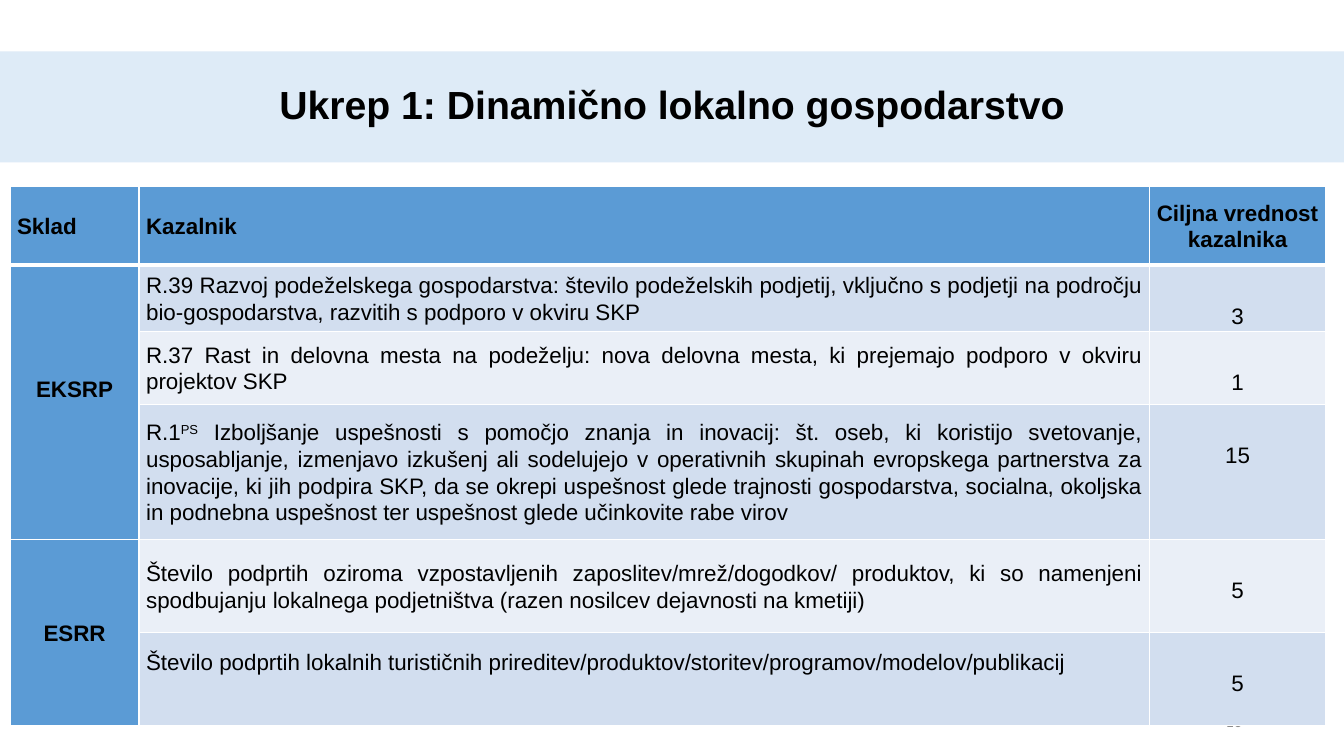
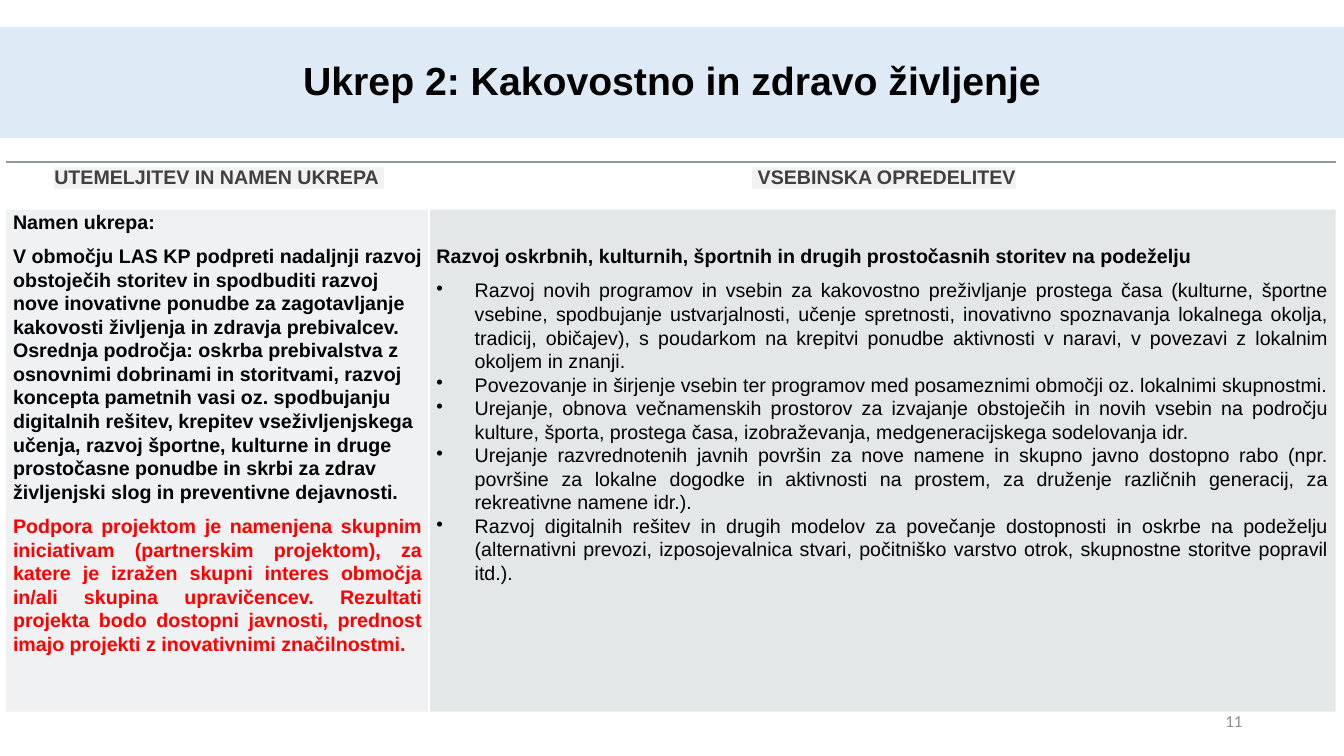
from dataclasses import dataclass

import pptx
import pptx.dml.color
import pptx.enum.text
import pptx.oxml.ns
import pptx.util
from lxml import etree

RGB = pptx.dml.color.RGBColor
ALIGN = pptx.enum.text.PP_ALIGN
ANCHOR = pptx.enum.text.MSO_ANCHOR
Inches = pptx.util.Inches
Pt = pptx.util.Pt
qn = pptx.oxml.ns.qn

BLACK = RGB(0x00, 0x00, 0x00)
WHITE = RGB(0xFF, 0xFF, 0xFF)
RED = RGB(0xFF, 0x00, 0x00)
DARK_GREY = RGB(0x40, 0x40, 0x40)
NUMBER_GREY = RGB(0x8C, 0x8C, 0x8C)
RULE_GREY = RGB(0x8F, 0x9A, 0x9D)
PANEL_GREY = RGB(0xB4, 0xBC, 0xBE)
HIGHLIGHT = RGB(0xF2, 0xF2, 0xF2)
BAND_BLUE = RGB(0xDE, 0xEB, 0xF7)
HEAD_BLUE = RGB(0x5B, 0x9B, 0xD5)
ROW_DARK = RGB(0xD2, 0xDE, 0xEF)
ROW_LIGHT = RGB(0xEA, 0xEF, 0xF7)

NO_STYLE = "{2D5ABB26-0587-4C30-8999-92F81FD0307C}"
BULLET_INDENT = Inches(0.38)


@dataclass
class Para:
    """A paragraph; text between two ^ marks is superscript."""
    text: str
    size: int = 14
    bold: bool = False
    color: RGB = BLACK
    align: ALIGN = ALIGN.LEFT
    spacing: float = 1.07
    after: int = 8
    font: str = "Arial"
    bullet: bool = False
    highlight: RGB = None


def add_color(parent, color, alpha=100):
    clr = etree.SubElement(parent, qn("a:srgbClr"), val=str(color))
    if alpha < 100:
        etree.SubElement(clr, qn("a:alpha"), val=str(alpha * 1000))


class Deck:
    """Holds the style and the current slide; lengths are percent of the slide."""

    def __init__(self):
        self.prs = pptx.Presentation()
        self.prs.slide_width = Inches(13.33)
        self.prs.slide_height = Inches(7.5)
        self.slide = None

    def x(self, percent):
        return round(self.prs.slide_width * percent / 100)

    def y(self, percent):
        return round(self.prs.slide_height * percent / 100)

    def add_text(self, tf, paras):
        for i, para in enumerate(paras):
            p = tf.add_paragraph() if i else tf.paragraphs[0]
            p.alignment = para.align
            p.line_spacing = para.spacing
            p.space_before = Pt(0)
            p.space_after = Pt(para.after)
            p.font.size = Pt(para.size)
            p.font.bold = para.bold
            p.font.name = para.font
            p.font.color.rgb = para.color
            for j, part in enumerate(para.text.split("^")):
                r = p.add_run()
                r.text = part
                rPr = r._r.get_or_add_rPr()
                if j % 2:
                    rPr.set("baseline", "30000")
                if para.highlight:
                    add_color(etree.SubElement(rPr, qn("a:highlight")), para.highlight)
            if para.bullet:
                pPr = p._p.get_or_add_pPr()
                pPr.set("marL", str(BULLET_INDENT))
                pPr.set("indent", str(-BULLET_INDENT))
                bu = etree.Element(qn("a:buChar"), char="•")
                pPr.find(qn("a:defRPr")).addprevious(bu)

    def new_slide(self, title, band_top, number):
        """Start a slide with its title band and page number."""
        self.slide = self.prs.slides.add_slide(self.prs.slide_layouts[5])
        sp = self.slide.shapes.title
        sp.left, sp.top = 0, self.y(band_top)
        sp.width, sp.height = self.x(100), self.y(14.67)
        sp.fill.solid()
        sp.fill.fore_color.rgb = BAND_BLUE
        tf = sp.text_frame
        tf.auto_size = pptx.enum.text.MSO_AUTO_SIZE.NONE
        tf.vertical_anchor = ANCHOR.MIDDLE
        self.add_text(tf, [Para(title, size=28, bold=True, align=ALIGN.CENTER,
                                spacing=0.9, after=0)])

        box = self.slide.shapes.add_textbox(self.x(70.67), self.y(92.67),
                                            self.x(22.5), self.y(5.33))
        tf = box.text_frame
        tf.word_wrap = True
        tf.vertical_anchor = ANCHOR.MIDDLE
        self.add_text(tf, [Para(number, size=12, color=NUMBER_GREY, font="Calibri",
                                align=ALIGN.RIGHT, spacing=1.0, after=0)])

    def table(self, left, top, cols, rows):
        frame = self.slide.shapes.add_table(len(rows), len(cols), self.x(left), self.y(top),
                                            self.x(sum(cols)), self.y(sum(rows)))
        tbl = frame.table
        tbl.horz_banding = False
        tbl._tbl.tblPr.find(qn("a:tableStyleId")).text = NO_STYLE
        for col, width in zip(tbl.columns, cols):
            col.width = self.x(width)
        for row, height in zip(tbl.rows, rows):
            row.height = self.y(height)
        return tbl

    def cell(self, cell, paras, anchor=ANCHOR.TOP, margins=(0.07, 0, 0.07, 0)):
        """Put text in a cell; margins are left, top, right, bottom in inches."""
        (cell.margin_left, cell.margin_top,
         cell.margin_right, cell.margin_bottom) = map(Inches, margins)
        cell.vertical_anchor = anchor
        self.add_text(cell.text_frame, paras)

    def paint(self, cell, fill=None, alpha=100, borders=None):
        """Fill a cell; borders maps a side (L, R, T, B) to colour, points, opacity."""
        if fill is None:
            cell.fill.background()
        else:
            cell.fill.solid()
            cell.fill.fore_color.rgb = fill
            if alpha < 100:
                clr = cell._tc.tcPr.find(qn("a:solidFill"))[0]
                etree.SubElement(clr, qn("a:alpha"), val=str(alpha * 1000))
        borders = borders or {}
        sides = [side for side in "LRTB" if side in borders]
        for i, side in enumerate(sides):
            color, points, opacity = borders[side]
            ln = etree.Element(qn("a:ln" + side), w=str(Pt(points)))
            add_color(etree.SubElement(ln, qn("a:solidFill")), color, opacity)
            cell._tc.tcPr.insert(i, ln)


def indicators_slide(deck):
    deck.new_slide("Ukrep 1: Dinamično lokalno gospodarstvo", 6.8, "10")
    tbl = deck.table(0.75, 24.67, cols=(9.6, 75.17, 13.13),
                     rows=(10.4, 8.53, 9.73, 17.87, 12.27, 12.27))

    for r in range(len(tbl.rows)):
        body = ROW_DARK if r % 2 else ROW_LIGHT
        for c in range(len(tbl.columns)):
            borders = dict.fromkeys("LRTB", (WHITE, 1, 100))
            if r == 0:
                borders["B"] = (WHITE, 3, 100)
            elif r == 1:
                borders["T"] = (WHITE, 3, 100)
            deck.paint(tbl.cell(r, c), body if r and c else HEAD_BLUE, borders=borders)

    heads = (("Sklad", ALIGN.LEFT), ("Kazalnik", ALIGN.LEFT),
             ("Ciljna vrednost kazalnika", ALIGN.CENTER))
    for c, (text, align) in enumerate(heads):
        deck.cell(tbl.cell(0, c), [Para(text, 16, True, align=align)], ANCHOR.MIDDLE)

    for name, first, last, bottom in (("EKSRP", 1, 3, 0.27), ("ESRR", 4, 5, 0)):
        tbl.cell(first, 0).merge(tbl.cell(last, 0))
        deck.cell(tbl.cell(first, 0), [Para(name, 16, True, align=ALIGN.CENTER)],
                  ANCHOR.MIDDLE, (0.07, 0, 0.07, bottom))

    indicators = (
        ("R.39 Razvoj podeželskega gospodarstva: število podeželskih podjetij, vključno s "
         "podjetji na področju bio-gospodarstva, razvitih s podporo v okviru SKP", "3", 0),
        ("R.37 Rast in delovna mesta na podeželju: nova delovna mesta, ki prejemajo podporo "
         "v okviru projektov SKP", "1", 0),
        ("R.1^PS^ Izboljšanje uspešnosti s pomočjo znanja in inovacij: št. oseb, ki koristijo "
         "svetovanje, usposabljanje, izmenjavo izkušenj ali sodelujejo v operativnih skupinah "
         "evropskega partnerstva za inovacije, ki jih podpira SKP, da se okrepi uspešnost glede "
         "trajnosti gospodarstva, socialna, okoljska in podnebna uspešnost ter uspešnost glede "
         "učinkovite rabe virov", "15", 0),
        ("Število podprtih oziroma vzpostavljenih zaposlitev/mrež/dogodkov/ produktov, ki so "
         "namenjeni spodbujanju lokalnega podjetništva (razen nosilcev dejavnosti na kmetiji)",
         "5", 0),
        ("Število podprtih lokalnih turističnih "
         "prireditev/produktov/storitev/programov/modelov/publikacij", "5", 0.34),
    )
    for r, (text, value, bottom) in enumerate(indicators, 1):
        deck.cell(tbl.cell(r, 1), [Para(text, 16, align=ALIGN.JUSTIFY)], ANCHOR.MIDDLE,
                  (0.07, 0, 0.07, bottom))
        deck.cell(tbl.cell(r, 2), [Para(value, 16, align=ALIGN.CENTER)],
                  margins=(0.07, 0.37, 0.07, 0))


def purpose_slide(deck):
    deck.new_slide("Ukrep 2: Kakovostno in zdravo življenje", 3.6, "11")
    tbl = deck.table(0.45, 21.47, cols=(31.5, 67.44), rows=(6.27, 66.4))

    for c, text in enumerate(("UTEMELJITEV IN NAMEN UKREPA ", " VSEBINSKA OPREDELITEV")):
        head = tbl.cell(0, c)
        deck.cell(head, [Para(text, bold=True, color=DARK_GREY, align=ALIGN.CENTER,
                              highlight=HIGHLIGHT)], margins=(0.06, 0.03, 0.03, 0.03))
        deck.paint(head, borders={"T": (RULE_GREY, 1.5, 60)})
    for c, (alpha, side) in enumerate(((20, "R"), (35, "L"))):
        deck.paint(tbl.cell(1, c), PANEL_GREY, alpha, {side: (WHITE, 1.5, 100)})

    deck.cell(tbl.cell(1, 0), [
        Para("Namen ukrepa:", bold=True),
        Para("V območju LAS KP podpreti nadaljnji razvoj obstoječih storitev in spodbuditi "
             "razvoj nove inovativne ponudbe za zagotavljanje kakovosti življenja in zdravja "
             "prebivalcev. Osrednja področja: oskrba prebivalstva z osnovnimi dobrinami in "
             "storitvami, razvoj koncepta pametnih vasi oz. spodbujanju digitalnih rešitev, "
             "krepitev vseživljenjskega učenja, razvoj športne, kulturne in druge prostočasne "
             "ponudbe in skrbi za zdrav življenjski slog in preventivne dejavnosti.", bold=True),
        Para("Podpora projektom je namenjena skupnim iniciativam (partnerskim projektom), za "
             "katere je izražen skupni interes območja in/ali skupina upravičencev. Rezultati "
             "projekta bodo dostopni javnosti, prednost imajo projekti z inovativnimi "
             "značilnostmi.", bold=True, color=RED, align=ALIGN.JUSTIFY),
    ])

    contents = (
        "Razvoj novih programov in vsebin za kakovostno preživljanje prostega časa (kulturne, "
        "športne vsebine, spodbujanje ustvarjalnosti, učenje spretnosti, inovativno spoznavanja "
        "lokalnega okolja, tradicij, običajev), s poudarkom na krepitvi ponudbe aktivnosti v "
        "naravi, v povezavi z lokalnim okoljem in znanji.",
        "Povezovanje in širjenje vsebin ter programov med posameznimi območji oz. lokalnimi "
        "skupnostmi.",
        "Urejanje, obnova večnamenskih prostorov za izvajanje obstoječih in novih vsebin na "
        "področju kulture, športa, prostega časa, izobraževanja, medgeneracijskega sodelovanja "
        "idr.",
        "Urejanje razvrednotenih javnih površin za nove namene in skupno javno dostopno rabo "
        "(npr. površine za lokalne dogodke in aktivnosti na prostem, za druženje različnih "
        "generacij, za rekreativne namene idr.).",
        "Razvoj digitalnih rešitev in drugih modelov za povečanje dostopnosti in oskrbe na "
        "podeželju (alternativni prevozi, izposojevalnica stvari, počitniško varstvo otrok, "
        "skupnostne storitve popravil itd.).",
    )
    heading = Para("Razvoj oskrbnih, kulturnih, športnih in drugih prostočasnih storitev na "
                   "podeželju", bold=True)
    bullets = [Para(text, align=ALIGN.JUSTIFY, after=0, bullet=True) for text in contents]
    deck.cell(tbl.cell(1, 1), [heading] + bullets, margins=(0.07, 0.34, 0.07, 0))


def main():
    deck = Deck()
    indicators_slide(deck)
    purpose_slide(deck)
    deck.prs.save("out.pptx")


if __name__ == "__main__":
    main()
